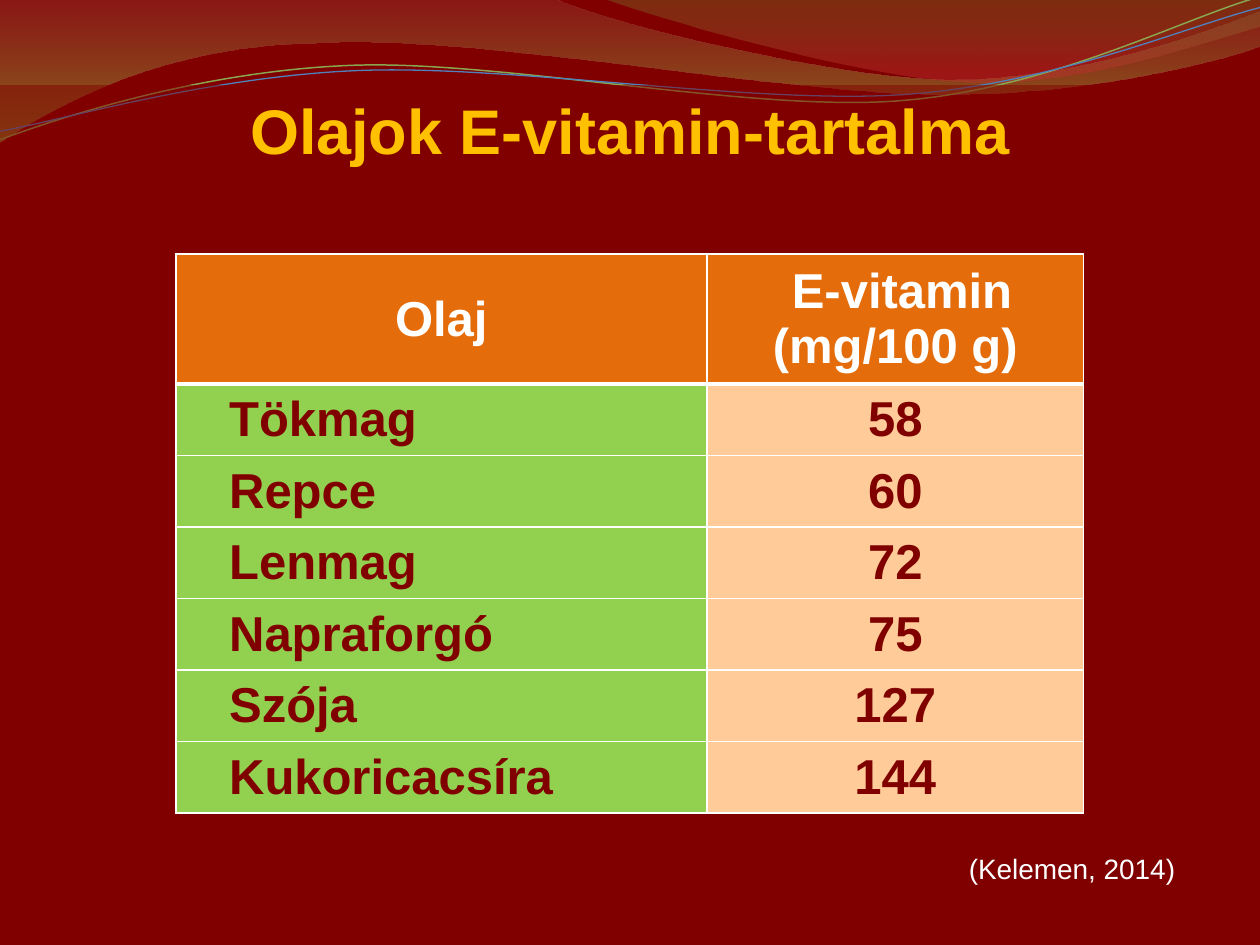
"""Builds a slide with a table of the vitamin E content of oils."""
from dataclasses import dataclass

import pptx
import pptx.dml.color
import pptx.enum.shapes
import pptx.enum.text
import pptx.oxml
import pptx.oxml.ns
import pptx.util

Pt = pptx.util.Pt
qn = pptx.oxml.ns.qn
ALIGN = pptx.enum.text.PP_ALIGN
MID = pptx.enum.text.MSO_ANCHOR.MIDDLE
SPACE = 'xmlns:a="http://schemas.openxmlformats.org/drawingml/2006/main"'


@dataclass(frozen=True)
class Theme:
    font: str = "Arial"
    back: str = "800000"
    gold: str = "FFC000"
    white: str = "FFFFFF"
    head: str = "E46C0A"
    oil: str = "92D050"
    value: str = "FFCC99"
    green: str = "89A54F"
    blue: str = "4F81BD"
    wide: tuple = ((0, "973330", 45), (1, "95C238", 55))
    small: tuple = ((0, "769537", 30), (0.8, "BE3330", 45))
    title: int = 36
    body: int = 28
    note: int = 16


THEME = Theme()

WIDE = [(0, -0.7), (316.8, -0.7),
        (342.7, 12.2, 478.1, 45.4, 545.8, 45.4),
        (614.2, 45.4, 689.8, 18.7, 720, 6.5), (720.7, 25.9),
        (707.8, 31.7, 626.4, 54.7, 537.1, 54),
        (447.8, 54, 275, 20.2, 185, 24.5),
        (92.9, 25.2, 33.1, 59.8, -0.7, 81.4), (0, -0.7)]
SMALL = [(344.9, -0.7), (366.5, 7.9, 491, 44.6, 553.7, 46.8),
         (616.3, 49.7, 691.9, 23, 720, 15.1), (720, 0), (344.9, -0.7)]
GREEN = [(-1.4, 62.9), (33.8, 51.7, 114.1, 29.4, 199.8, 29.9),
         (284.8, 30.3, 425.8, 67.3, 512.4, 64.9),
         (599, 62.4, 676.5, 25.7, 720.2, 15.5)]
BLUE = [(-1.1, 58), (32.9, 53.8, 118.3, 32.5, 204.1, 33),
        (290.6, 33.4, 428.9, 63.1, 515.5, 61.4),
        (601.3, 59.6, 679.1, 30.1, 721.4, 21.3)]

OILS = [("Tökmag", "58"), ("Repce", "60"), ("Lenmag", "72"),
        ("Napraforgó", "75"), ("Szója", "127"), ("Kukoricacsíra", "144")]


def rgb(code):
    return pptx.dml.color.RGBColor.from_string(code)


def paint(fill, code):
    fill.solid()
    fill.fore_color.rgb = rgb(code)


def fade(node, share):
    node.append(pptx.oxml.parse_xml(f'<a:alpha {SPACE} val="{share * 1000}"/>'))


def bend(shape, steps):
    lines = iter(list(shape._element.spPr.iter(qn("a:lnTo"))))
    for step in steps[1:]:
        first = next(lines)
        if len(step) == 2:
            continue
        curve = pptx.oxml.parse_xml(f"<a:cubicBezTo {SPACE}/>")
        first.addprevious(curve)
        for line in (first, next(lines), next(lines)):
            curve.append(line[0])
            line.getparent().remove(line)


def outline(slide, steps, close):
    spots = [(Pt(step[i]), Pt(step[i + 1]))
             for step in steps for i in range(0, len(step), 2)]
    pen = slide.shapes.build_freeform(*spots[0], scale=1.0)
    pen.add_line_segments(spots[1:], close=close)
    shape = pen.convert_to_shape()
    shape.shadow.inherit = False
    bend(shape, steps)
    return shape


def add_wave(slide, steps, stops):
    shape = outline(slide, steps, True)
    shape.line.fill.background()
    shape.fill.gradient()
    shape.fill.gradient_angle = 270
    for stop, (place, code, _) in zip(shape.fill.gradient_stops, stops):
        stop.position = place
        stop.color.rgb = rgb(code)
    nodes = list(shape._element.spPr.iter(qn("a:srgbClr")))
    for node, (_, _, share) in zip(nodes, stops):
        fade(node, share)


def add_curve(slide, steps, code, width):
    shape = outline(slide, steps, False)
    shape.rotation = 357.3
    shape.fill.background()
    shape.line.color.rgb = rgb(code)
    shape.line.width = Pt(width)


def write(frame, lines, size, code, bold=True, align=ALIGN.CENTER):
    for i, line in enumerate(lines):
        para = frame.add_paragraph() if i else frame.paragraphs[0]
        para.alignment = align
        run = para.add_run()
        run.text = line
        run.font.name = THEME.font
        run.font.size = Pt(size)
        run.font.bold = bold
        run.font.color.rgb = rgb(code)


def add_title(slide, text):
    kind = pptx.enum.shapes.MSO_SHAPE.RECTANGLE
    box = slide.shapes.add_shape(kind, 0, Pt(48.6), Pt(720), Pt(51))
    box.shadow.inherit = False
    box.line.fill.background()
    paint(box.fill, THEME.back)
    fade(next(box._element.spPr.iter(qn("a:srgbClr"))), 49)
    write(box.text_frame, [text], THEME.title, THEME.gold)


def add_note(slide, text):
    box = slide.shapes.add_textbox(Pt(546.5), Pt(483), Pt(173.5), Pt(26.6))
    box.text_frame.word_wrap = True
    write(box.text_frame, [text], THEME.note, THEME.white, False, ALIGN.LEFT)


def edge(cell, top=1, base=1):
    for side, width in zip("LRTB", (1, 1, top, base)):
        cell._tc.get_or_add_tcPr().append(pptx.oxml.parse_xml(
            f'<a:ln{side} {SPACE} w="{Pt(width)}"><a:solidFill>'
            f'<a:srgbClr val="{THEME.white}"/></a:solidFill></a:ln{side}>'))


def set_cell(cell, lines, fill, code, align=ALIGN.CENTER, **sides):
    edge(cell, **sides)
    paint(cell.fill, fill)
    cell.vertical_anchor = MID
    write(cell.text_frame, lines, THEME.body, code, align=align)


def add_grid(slide):
    frame = slide.shapes.add_table(len(OILS) + 1, 2, Pt(100.5), Pt(145.2),
                                   Pt(518.8), Pt(319.4))
    grid = frame.table
    grid.horz_banding = False
    for col, width in zip(grid.columns, (303.4, 215.4)):
        col.width = Pt(width)
    for i, row in enumerate(grid.rows):
        row.height = Pt(40.85 if i else 74.3)
    heads = (["Olaj"], [" E-vitamin", "(mg/100 g)"])
    for i, lines in enumerate(heads):
        set_cell(grid.cell(0, i), lines, THEME.head, THEME.white, base=3)
    for i, (oil, value) in enumerate(OILS, 1):
        top = 3 if i == 1 else 1
        left = grid.cell(i, 0)
        set_cell(left, [oil], THEME.oil, THEME.back, ALIGN.LEFT, top=top)
        left.margin_left = Pt(30.5)
        set_cell(grid.cell(i, 1), [value], THEME.value, THEME.back, top=top)


def main():
    deck = pptx.Presentation()
    deck.slide_width, deck.slide_height = Pt(720), Pt(540)
    slide = deck.slides.add_slide(deck.slide_layouts[6])
    paint(slide.background.fill, THEME.back)
    add_wave(slide, WIDE, THEME.wide)
    add_wave(slide, SMALL, THEME.small)
    add_curve(slide, GREEN, THEME.green, 0.85)
    add_curve(slide, BLUE, THEME.blue, 0.75)
    add_title(slide, "Olajok E-vitamin-tartalma")
    add_grid(slide)
    add_note(slide, "(Kelemen, 2014)")
    deck.save("out.pptx")


if __name__ == "__main__":
    main()
